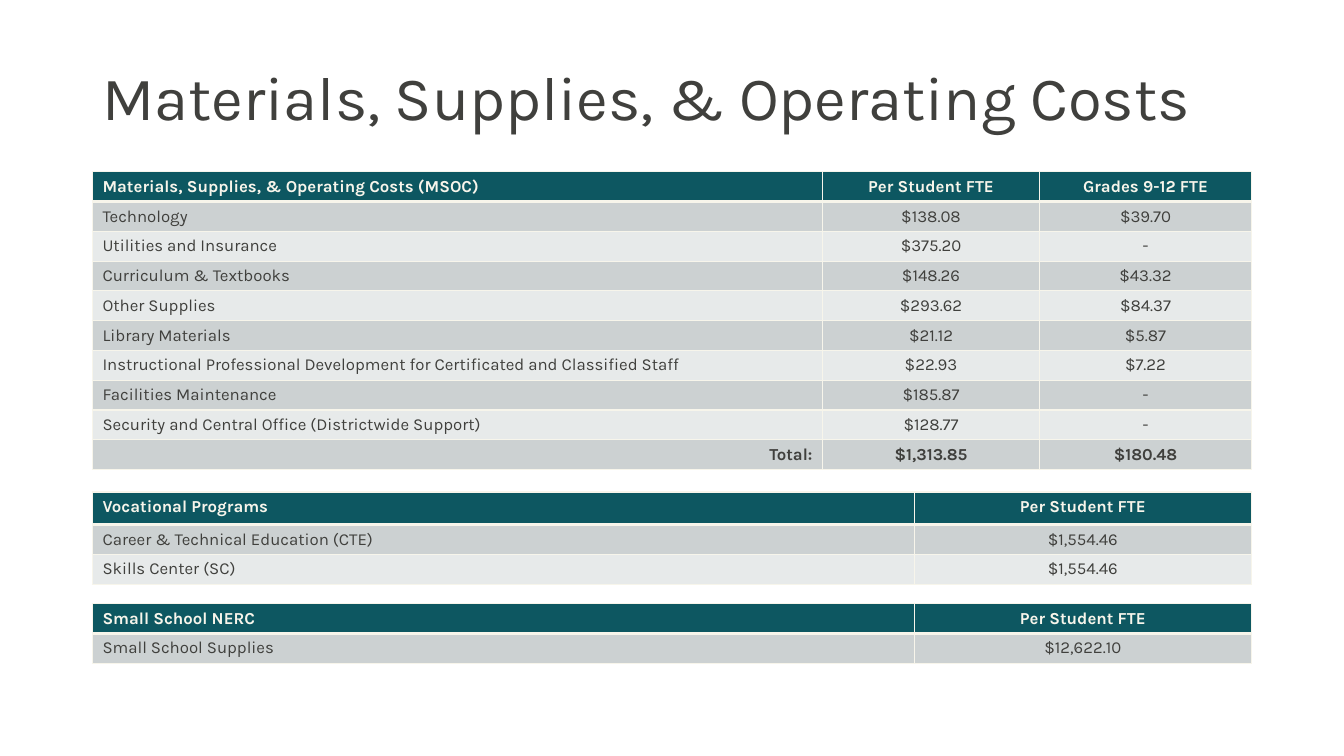
from lxml.etree import SubElement
from pptx import Presentation
from pptx.dml.color import RGBColor
from pptx.enum.text import MSO_ANCHOR as Anchor, MSO_AUTO_SIZE as Fit, PP_ALIGN as Align
from pptx.oxml.ns import qn
from pptx.util import Cm, Pt

FONT = "Karla"
DARK = RGBColor(0x40, 0x40, 0x3D)
CREAM = RGBColor(0xF7, 0xF5, 0xEB)
TEAL = RGBColor(0x0D, 0x57, 0x61)
GREY = RGBColor(0xCC, 0xD1, 0xD2)
PALE = RGBColor(0xE7, 0xEA, 0xEA)

LEFT, WIDTH = 2.33, 29.21
ROW = 0.75

COSTS = [
    ("Materials, Supplies, & Operating Costs (MSOC)", "Per Student FTE", "Grades 9-12 FTE"),
    ("Technology", "$138.08", "$39.70"),
    ("Utilities and Insurance", "$375.20", "-"),
    ("Curriculum & Textbooks", "$148.26", "$43.32"),
    ("Other Supplies", "$293.62", "$84.37"),
    ("Library Materials", "$21.12", "$5.87"),
    ("Instructional Professional Development for Certificated and Classified Staff",
     "$22.93", "$7.22"),
    ("Facilities Maintenance", "$185.87", "-"),
    ("Security and Central Office (Districtwide Support)", "$128.77", "-"),
    ("Total:", "$1,313.85", "$180.48"),
]
VOCATIONAL = [
    ("Vocational Programs", "Per Student FTE"),
    ("Career & Technical Education (CTE)", "$1,554.46"),
    ("Skills Center (SC)", "$1,554.46"),
]
SMALL = [
    ("Small School NERC", "Per Student FTE"),
    ("Small School Supplies", "$12,622.10"),
]


def style(par, size, color, align, bold=False):
    par.alignment = align
    for run in par.runs:
        font = run.font
        font.name, font.size, font.bold = FONT, Pt(size), bold
        font.color.rgb = color


def add_title(slide, text):
    title = slide.shapes.title
    title.left, title.top = Cm(LEFT), Cm(1.02)
    title.width, title.height = Cm(WIDTH), Cm(3.02)
    frame = title.text_frame
    frame.text = text
    frame.word_wrap, frame.auto_size = True, Fit.NONE
    frame.vertical_anchor = Anchor.MIDDLE
    par = frame.paragraphs[0]
    par.line_spacing = 0.9
    style(par, 44, DARK, Align.LEFT)


def set_edges(cell, row):
    """Draw thin borders, with a thick one between the header and the body."""
    props = cell._tc.get_or_add_tcPr()
    thick = {0: "lnB", 1: "lnT"}.get(row)
    for tag in ("lnL", "lnR", "lnT", "lnB"):
        line = SubElement(props, qn(f"a:{tag}"), w=str(Pt(3 if tag == thick else 1)))
        fill = SubElement(line, qn("a:solidFill"))
        SubElement(fill, qn("a:srgbClr"), val=str(CREAM))


def fill_cell(cell, text, row, col):
    head, total = row == 0, text == "Total:"
    set_edges(cell, row)
    cell.fill.solid()
    cell.fill.fore_color.rgb = TEAL if head else GREY if row % 2 else PALE
    cell.text_frame.text = text
    align = Align.CENTER if col else Align.RIGHT if total else Align.LEFT
    style(cell.text_frame.paragraphs[0], 12, CREAM if head else DARK, align, head)


def add_grid(slide, top, data, widths, head=ROW):
    """Add a table with a header row, and return it."""
    heights = [head] + [ROW] * (len(data) - 1)
    table = slide.shapes.add_table(len(data), len(widths), Cm(LEFT), Cm(top),
                                   Cm(WIDTH), Cm(sum(heights))).table
    for col, width in zip(table.columns, widths):
        col.width = Cm(width)
    for row, height in zip(table.rows, heights):
        row.height = Cm(height)
    for row, texts in enumerate(data):
        for col, text in enumerate(texts):
            fill_cell(table.cell(row, col), text, row, col)
    return table


def embolden(row):
    for cell in row.cells:
        for run in cell.text_frame.paragraphs[0].runs:
            run.font.bold = True


def main():
    deck = Presentation()
    deck.slide_width, deck.slide_height = Cm(33.87), Cm(19.05)
    slide = deck.slides.add_slide(deck.slide_layouts[5])
    add_title(slide, "Materials, Supplies, & Operating Costs")
    costs = add_grid(slide, 4.33, COSTS, (18.4, 5.47, 5.34))
    embolden(costs.rows[len(COSTS) - 1])
    pair = (20.71, 8.5)
    add_grid(slide, 12.4, VOCATIONAL, pair, head=0.82)
    add_grid(slide, 15.21, SMALL, pair)
    deck.save("out.pptx")


if __name__ == "__main__":
    main()
